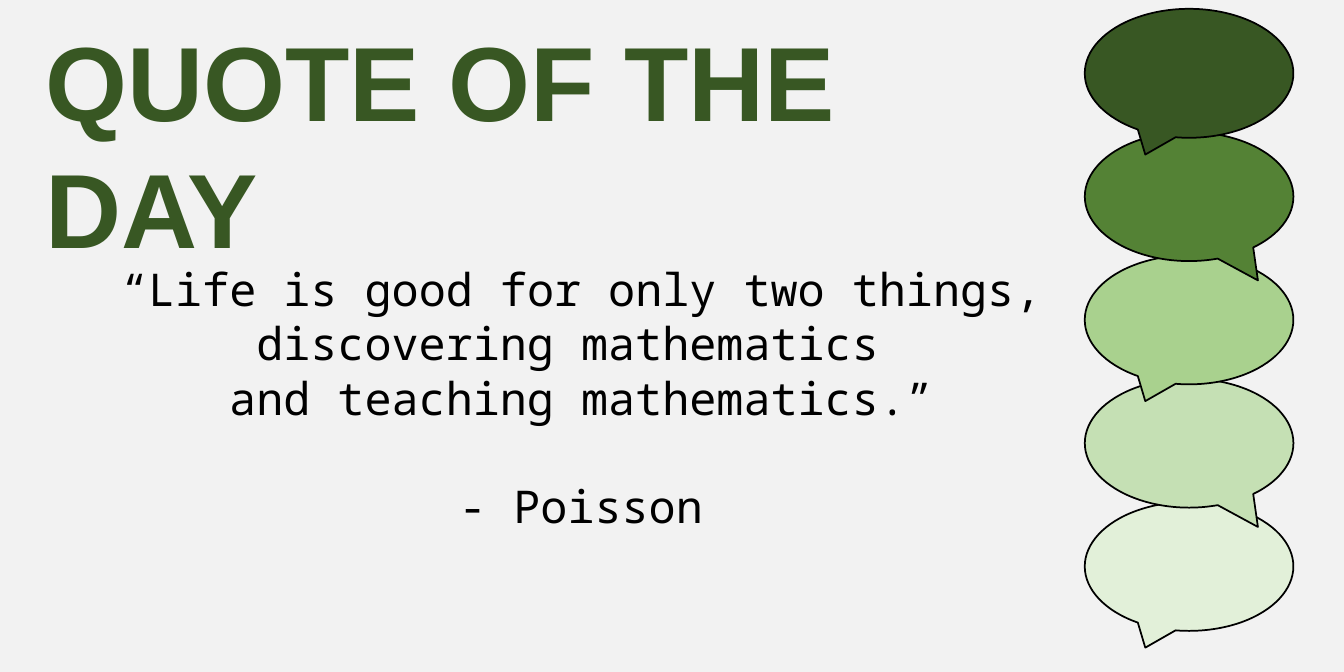
from dataclasses import dataclass

from pptx import Presentation
from pptx.dml.color import RGBColor
from pptx.enum.shapes import MSO_SHAPE
from pptx.enum.text import MSO_ANCHOR, MSO_AUTO_SIZE, PP_ALIGN
from pptx.util import Inches, Pt

CALLOUT = MSO_SHAPE.OVAL_CALLOUT
TOP = MSO_ANCHOR.TOP
NO_FIT = MSO_AUTO_SIZE.NONE
LEFT, CENTER = PP_ALIGN.LEFT, PP_ALIGN.CENTER


@dataclass(frozen=True)
class Theme:
    background: str = "F2F2F2"
    ink: str = "000000"
    greens: tuple = ("385723", "548235", "A9D18E", "C5E0B4", "E2F0D9")
    title_font: str = "Arial"
    quote_font: str = "Noto Sans Mono"
    title_size: float = 60
    quote_size: float = 25.7


theme = Theme()


def add_run(p, text, font, size, color, bold=False):
    r = p.add_run()
    r.text = text
    r.font.name = font
    r.font.size = Pt(size)
    r.font.bold = bold
    r.font.color.rgb = RGBColor.from_string(color)


# The slide is twice as wide as it is high
slide_width = 10.63
prs = Presentation()
prs.slide_width, prs.slide_height = Inches(slide_width), Inches(slide_width / 2)
slide = prs.slides.add_slide(prs.slide_layouts[5])
slide.background.fill.solid()
slide.background.fill.fore_color.rgb = RGBColor.from_string(theme.background)

# Speech bubbles, stacked from the bottom so each overlaps the one below
bubble_top, bubble_bottom = 0.07, 3.97
bubble_pitch = (bubble_bottom - bubble_top) / (len(theme.greens) - 1)
tail_left, tail_right = (-0.21, 0.63), (0.33, 0.65)
for i, green in reversed(list(enumerate(theme.greens))):
    sp = slide.shapes.add_shape(CALLOUT, Inches(8.58), Inches(bubble_top + i * bubble_pitch),
                                Inches(1.65), Inches(1.02))
    sp.adjustments[0], sp.adjustments[1] = tail_right if i % 2 else tail_left
    sp.shadow.inherit = False
    sp.fill.solid()
    sp.fill.fore_color.rgb = RGBColor.from_string(green)
    sp.line.color.rgb = RGBColor.from_string(theme.ink)
    sp.line.width = Pt(1)

# Title
title = slide.shapes.title
title.left, title.top = Inches(0.26), Inches(0.08)
title.width, title.height = Inches(7.93), Inches(1.11)
tf = title.text_frame
tf.word_wrap = True
tf.auto_size = NO_FIT
tf.vertical_anchor = TOP
tf.margin_left = tf.margin_right = Inches(0.1)
tf.margin_top = Inches(0.05)
p = tf.paragraphs[0]
p.alignment = LEFT
add_run(p, "QUOTE OF THE DAY", theme.title_font, theme.title_size, theme.greens[0], bold=True)

# Quote and its author
quote = ["“Life is good for only two things,", "discovering mathematics ", "and teaching mathematics.”"]
author = "- Poisson"
box = slide.shapes.add_textbox(Inches(0.32), Inches(2.02), Inches(8.55), Inches(2.26))
tf = box.text_frame
tf.word_wrap = True
for i, line in enumerate([*quote, author]):
    p = tf.add_paragraph() if i else tf.paragraphs[0]
    p.alignment = CENTER
    add_run(p, line, theme.quote_font, theme.quote_size, theme.ink)
p.space_before = Pt(30.8)

prs.save("out.pptx")
